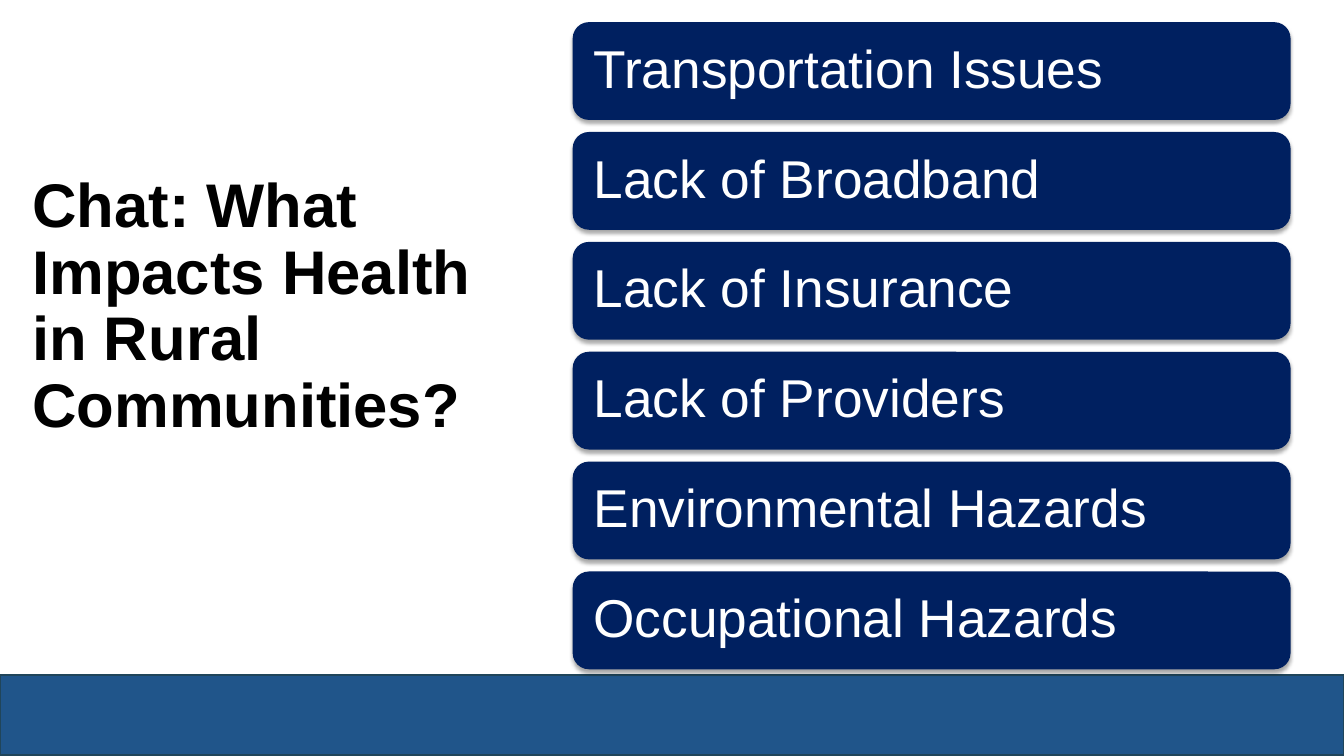
from lxml import etree
from pptx import Presentation
from pptx import util as u
from pptx.dml.color import RGBColor
from pptx.enum import shapes, text
from pptx.oxml.ns import qn

TITLE = "Chat: What Impacts Health in Rural Communities?"
FACTORS = [
    "Transportation Issues",
    "Lack of Broadband",
    "Lack of Insurance",
    "Lack of Providers",
    "Environmental Hazards",
    "Occupational Hazards",
]
FONT = "Arial"
CARD_LEFT, CARD_TOP, CARD_WIDTH, CARD_HEIGHT = 5.68, 0.22, 7.12, 0.97
CARD_STEP = 1.09


def color(hex_value):
    return RGBColor.from_string(hex_value)


def write(shape, words, size, hex_value, inset, bold=False):
    """Fill a shape with one left-aligned, vertically centred paragraph."""
    frame = shape.text_frame
    frame.word_wrap = True
    frame.auto_size = text.MSO_AUTO_SIZE.NONE
    frame.vertical_anchor = text.MSO_ANCHOR.MIDDLE
    frame.margin_left = frame.margin_right = u.Inches(inset[0])
    frame.margin_top = frame.margin_bottom = u.Inches(inset[1])
    para = frame.paragraphs[0]
    para.alignment = text.PP_ALIGN.LEFT
    para.line_spacing = 0.9
    span = para.add_run()
    span.text = words
    span.font.name = FONT
    span.font.size = u.Pt(size)
    span.font.bold = bold
    span.font.color.rgb = color(hex_value)


def add_block(slide, kind, place, fill):
    block = slide.shapes.add_shape(kind, *(u.Inches(value) for value in place))
    block.shadow.inherit = False
    block.fill.solid()
    block.fill.fore_color.rgb = color(fill)
    block.line.fill.background()
    return block


def add_soft_shadow(shape):
    effects = shape._element.spPr.find(qn("a:effectLst"))
    shadow = etree.SubElement(
        effects, qn("a:outerShdw"), blurRad=str(u.Pt(3.1)), dist=str(u.Pt(1.8)),
        dir="5400000", rotWithShape="0")
    tint = etree.SubElement(shadow, qn("a:srgbClr"), val="000000")
    etree.SubElement(tint, qn("a:alpha"), val="35000")


def main():
    deck = Presentation()
    deck.slide_width, deck.slide_height = u.Inches(13.33), u.Inches(7.5)
    slide = deck.slides.add_slide(deck.slide_layouts[5])

    band = add_block(slide, shapes.MSO_SHAPE.RECTANGLE, (0, 6.7, 13.33, 0.79), "20558A")
    band.line.color.rgb = color("20455A")
    band.line.width = u.Pt(1.5)

    title = slide.shapes.title
    title.left, title.top = u.Inches(0.22), u.Inches(0.43)
    title.width, title.height = u.Inches(5.11), u.Inches(5.24)
    write(title, TITLE, 44, "000000", (0.1, 0.05), bold=True)

    for index, factor in enumerate(FACTORS):
        place = (CARD_LEFT, CARD_TOP + index * CARD_STEP, CARD_WIDTH, CARD_HEIGHT)
        card = add_block(slide, shapes.MSO_SHAPE.ROUNDED_RECTANGLE, place, "002060")
        add_soft_shadow(card)
        write(card, factor, 38, "FFFFFF", (0.16, 0.16))

    deck.save("out.pptx")


if __name__ == "__main__":
    main()
